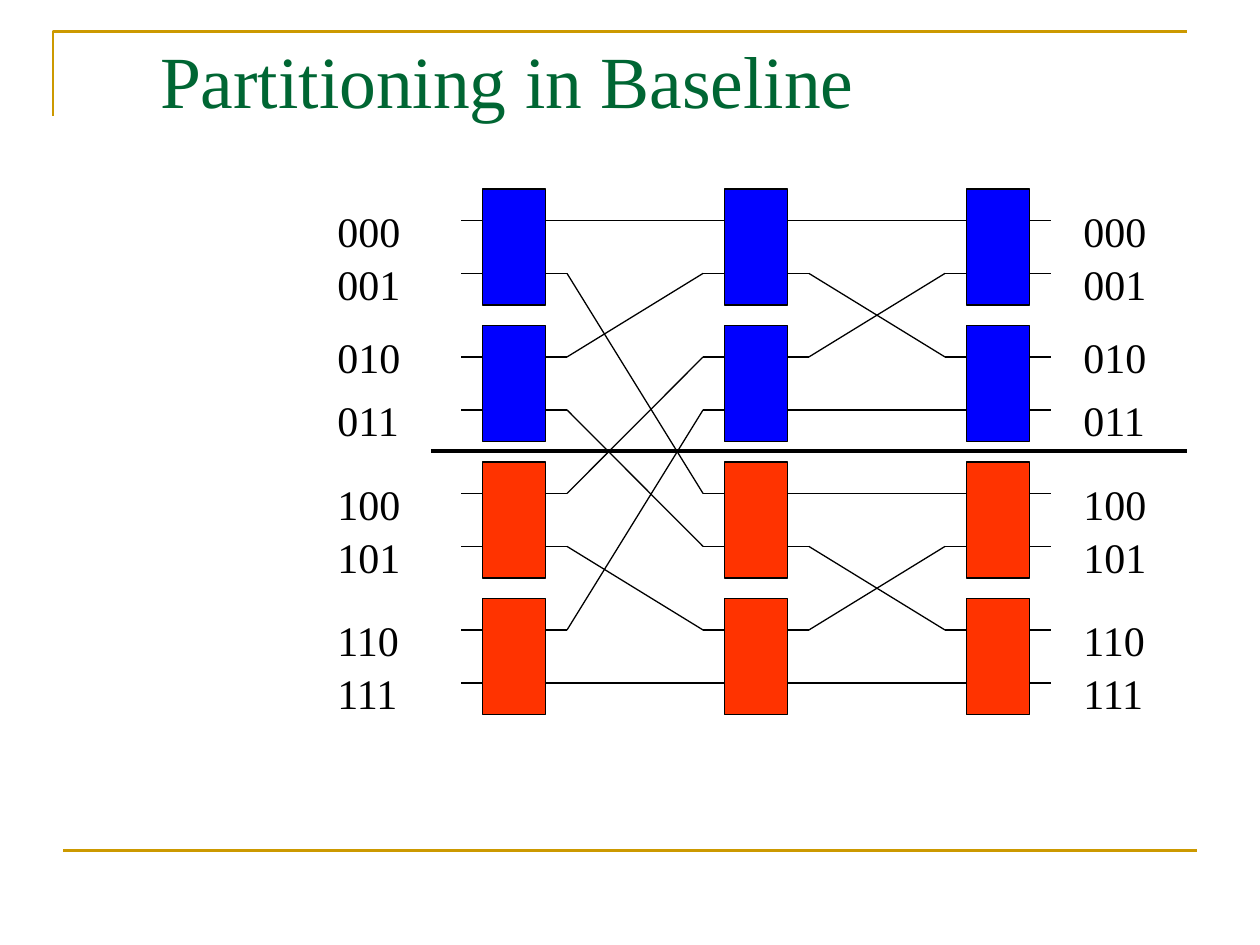
from lxml.etree import SubElement
from pptx import Presentation
from pptx.dml.color import RGBColor
from pptx.enum.shapes import MSO_CONNECTOR, MSO_SHAPE
from pptx.enum.text import MSO_ANCHOR, MSO_AUTO_SIZE, PP_ALIGN
from pptx.oxml.ns import qn
from pptx.util import Inches, Pt

BLACK = RGBColor(0x00, 0x00, 0x00)
BLUE = RGBColor(0x00, 0x00, 0xFF)
RED = RGBColor(0xFF, 0x33, 0x00)
GREEN = RGBColor(0x00, 0x66, 0x33)
GOLD = RGBColor(0xCC, 0x99, 0x00)
FONT = "Times New Roman"

# Switch grid, in inches
STAGE_X = [3.83, 5.75, 7.67]
TOP, PITCH = 1.5, 13 / 12
BOX_W, BOX_H, STUB = 0.5, 0.92, 0.17
PORT_Y = [TOP + i * PITCH + dy for i in range(4) for dy in (0.25, 0.67)]
LABEL_Y = [1.58, 2, 2.58, 3.08, 3.75, 4.17, 4.83, 5.25]


def write(tf, text, size=24, color=BLACK, font=FONT):
    p = tf.paragraphs[0]
    p.alignment = PP_ALIGN.LEFT
    r = p.add_run()
    r.text = text
    r.font.size = Pt(size)
    r.font.name = font
    r.font.color.rgb = color


def unshuffle(port, block):
    """Send even ports to the upper half of their block, odd ones to the lower."""
    base, k = port // block * block, port % block
    return base + k // 2 + k % 2 * block // 2


class Diagram:
    def __init__(self, slide, color=BLACK, weight=0.75):
        self.slide = slide
        self.color = color
        self.weight = weight

    def title(self, text, x, y, w, h):
        sp = self.slide.shapes.title
        sp.left, sp.top, sp.width, sp.height = map(Inches, (x, y, w, h))
        tf = sp.text_frame
        tf.vertical_anchor = MSO_ANCHOR.TOP
        tf.margin_top = Inches(0.11)
        write(tf, text, size=42, color=GREEN)

    def line(self, x1, y1, x2, y2, color=None, weight=None):
        c = self.slide.shapes.add_connector(
            MSO_CONNECTOR.STRAIGHT, *map(Inches, (x1, y1, x2, y2)))
        c.line.color.rgb = color or self.color
        c.line.width = Pt(weight or self.weight)
        SubElement(c._element.spPr, qn("a:effectLst"))

    def corner(self, points, color, weight):
        start, *rest = [(Inches(x), Inches(y)) for x, y in points]
        fb = self.slide.shapes.build_freeform(*start)
        fb.add_line_segments(rest, close=False)
        sp = fb.convert_to_shape()
        sp.shadow.inherit = False
        sp.fill.background()
        sp.line.color.rgb = color
        sp.line.width = Pt(weight)

    def switch(self, x, y, fill):
        sp = self.slide.shapes.add_shape(
            MSO_SHAPE.RECTANGLE, *map(Inches, (x, y, BOX_W, BOX_H)))
        sp.shadow.inherit = False
        sp.fill.solid()
        sp.fill.fore_color.rgb = fill
        sp.line.color.rgb = self.color
        sp.line.width = Pt(self.weight)

    def label(self, text, x, y):
        sp = self.slide.shapes.add_textbox(*map(Inches, (x, y, 0.7, 0.5)))
        tf = sp.text_frame
        tf.word_wrap = False
        tf.auto_size = MSO_AUTO_SIZE.SHAPE_TO_FIT_TEXT
        write(tf, text)


def main():
    prs = Presentation()
    prs.slide_width, prs.slide_height = Inches(10), Inches(7.5)
    s = prs.slides.add_slide(prs.slide_layouts[5])
    d = Diagram(s)

    # Frame and title
    d.corner([(0.42, 0.92), (0.42, 0.25), (9.42, 0.25)], GOLD, 1.5)
    d.line(0.5, 6.75, 9.5, 6.75, color=GOLD, weight=1.5)
    d.title("Partitioning in Baseline", 1.17, 0.17, 8.5, 1.08)

    # Switches with their port stubs
    for x in STAGE_X:
        for i in range(4):
            d.switch(x, TOP + i * PITCH, BLUE if i < 2 else RED)
        for y in PORT_Y:
            d.line(x - STUB, y, x, y)
            d.line(x + BOX_W, y, x + BOX_W + STUB, y)

    # Wires between stages: the block halves at each stage
    for left, right, block in zip(STAGE_X, STAGE_X[1:], (8, 4)):
        for port, y in enumerate(PORT_Y):
            d.line(left + BOX_W + STUB, y,
                   right - STUB, PORT_Y[unshuffle(port, block)])

    # Binary addresses on both sides
    for x in (2.58, 8.5):
        for n, y in enumerate(LABEL_Y):
            d.label(f"{n:03b}", x, y)

    # Partition line
    d.line(3.42, 3.58, 9.42, 3.58, weight=2.25)

    prs.save("out.pptx")


if __name__ == "__main__":
    main()
